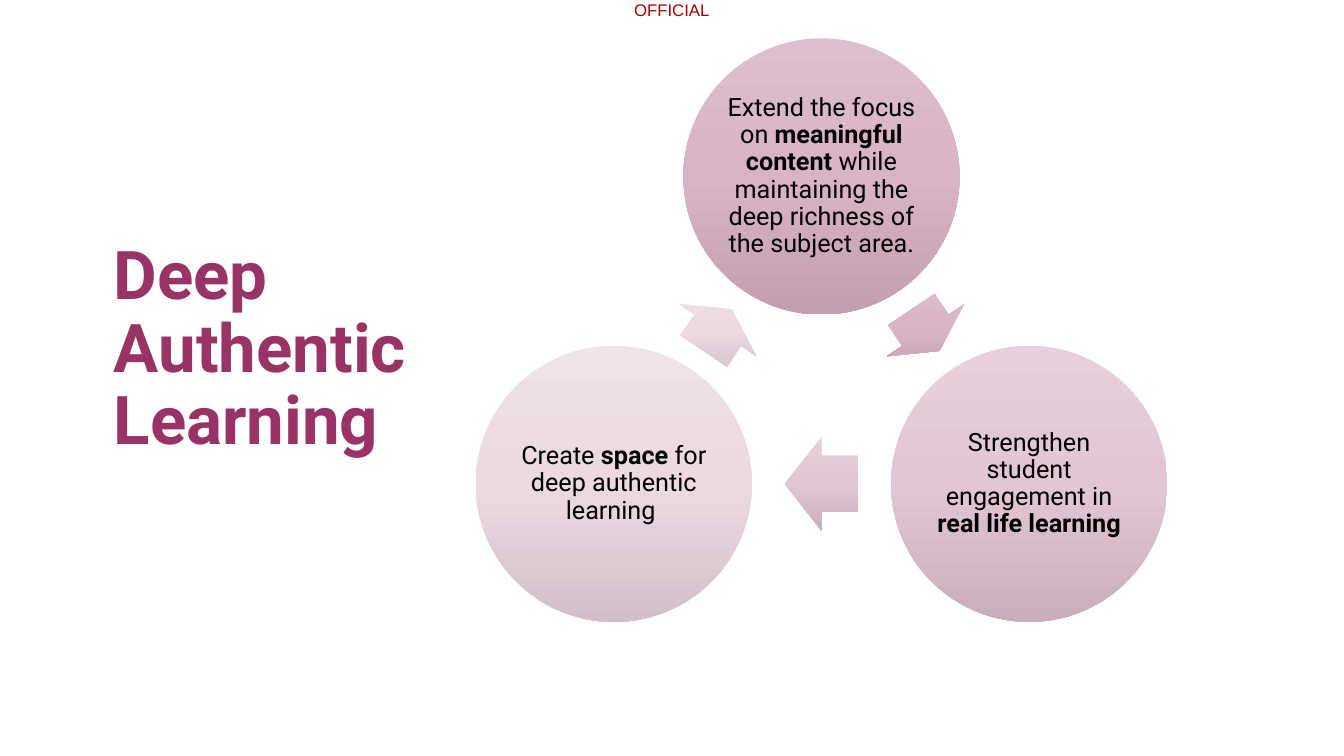
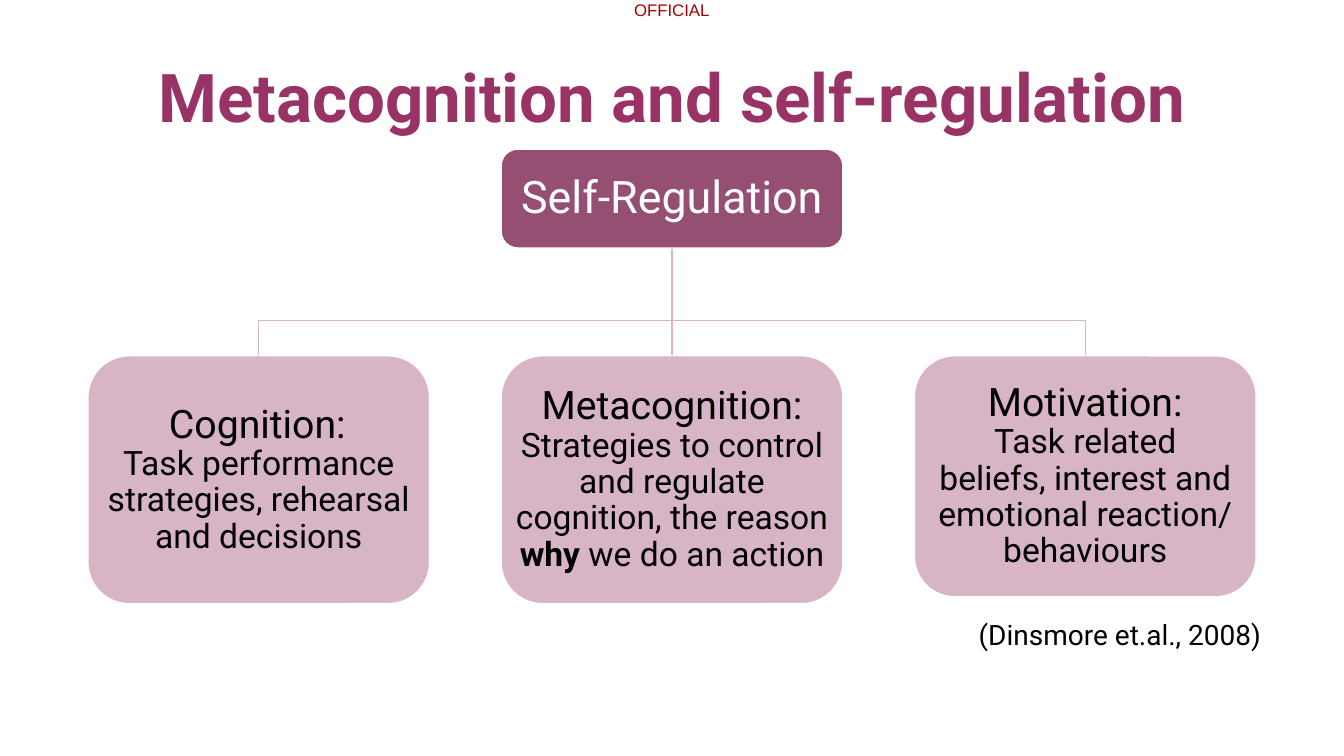
from dataclasses import dataclass
from itertools import chain
from math import atan2, degrees, hypot

from lxml.etree import SubElement
from pptx import Presentation
from pptx.dml.color import RGBColor
from pptx.enum.shapes import MSO_SHAPE as Shape
from pptx.enum.text import MSO_ANCHOR as Anchor, PP_ALIGN as Align
from pptx.oxml.ns import qn
from pptx.shapes.autoshape import Shape as Box
from pptx.slide import Slide
from pptx.util import Inches, Pt


@dataclass(frozen=True)
class Theme:
    font: str = "Roboto"
    marking_font: str = "Arial"
    marking: str = "A80000"
    title: str = "993366"
    ink: str = "000000"
    white: str = "FFFFFF"
    plum: str = "954F72"
    pink: str = "D7B5C6"
    marking_size: int = 12
    title_size: int = 48
    circle_size: int = 18
    root_size: int = 32
    heading_size: int = 28
    body_size: int = 24
    citation_size: int = 20
    gap_size: int = 8


THEME = Theme()


@dataclass(frozen=True)
class Span:
    text: str
    bold: bool = False
    size: int | None = None
    ends_line: bool = False


@dataclass(frozen=True)
class Stage:
    x: float
    y: float
    shades: tuple[str, str, str]
    spans: tuple[Span, ...]


@dataclass(frozen=True)
class Branch:
    spans: tuple[Span, ...]
    height: float = 2.46


CYCLE_X = 8.15
CYCLE_SPREAD = 2.06
CIRCLE = 2.74
ARROW_WIDTH = 0.93
ARROW_SHARE = 0.53
STAGES = (
    Stage(CYCLE_X, 1.75, ("DDBFCE", "D9B3C6", "C39DB0"), (
        Span("Extend the focus on "), Span("meaningful content ", True),
        Span("while maintaining the deep richness of the subject area."))),
    Stage(CYCLE_X + CYCLE_SPREAD, 4.8, ("E6D0DB", "E2C6D4", "CBAEBC"), (
        Span("Strengthen student engagement in "), Span("real life learning", True))),
    Stage(CYCLE_X - CYCLE_SPREAD, 4.8, ("EFE2E8", "ECD9E2", "D3BFC9"), (
        Span("Create "), Span("space ", True), Span("for deep authentic learning "))),
)

PAGE_WIDTH, PAGE_HEIGHT = 40 / 3, 7.5
TREE_X = PAGE_WIDTH / 2
TREE_STEP = 4.1
NODE_WIDTH = 3.39
ROOT_TOP, ROOT_HEIGHT = 1.48, 0.98
BUS_Y = 3.18
BRANCH_TOP = 3.53
NO_BREAK_SPACE = chr(160)
BRANCHES = (
    Branch((
        Span("Cognition:", size=THEME.heading_size),
        Span(" ", size=THEME.gap_size, ends_line=True),
        Span("Task performance strategies, rehearsal and decisions"))),
    Branch((
        Span("Metacognition:", size=THEME.heading_size, ends_line=True),
        Span("Strategies to control and regulate cognition, the reason "),
        Span("why", True), Span(" we do an action"))),
    Branch((
        Span("Motivation:", size=THEME.heading_size, ends_line=True),
        Span(f"Task related beliefs,{NO_BREAK_SPACE}interest and "
             "emotional reaction/ behaviours")), 2.39),
)


def rgb(color: str) -> RGBColor:
    return RGBColor.from_string(color)


def set_insets(box: Box, inset: float) -> None:
    frame = box.text_frame
    frame.margin_left = frame.margin_right = Inches(inset)
    frame.margin_top = frame.margin_bottom = Inches(inset)


def write(box: Box, spans: tuple[Span, ...], size: int, color: str = THEME.ink,
          align: Align = Align.CENTER, font: str = THEME.font) -> None:
    """Fill the box with one paragraph made of the spans."""
    frame = box.text_frame
    frame.vertical_anchor = Anchor.MIDDLE
    para = frame.paragraphs[0]
    para.alignment = align
    para.line_spacing = 0.9
    para.font.name = font
    para.font.size = Pt(size)
    para.font.color.rgb = rgb(color)
    for span in spans:
        run = para.add_run()
        run.text = span.text
        run.font.bold = span.bold
        if span.size:
            run.font.size = Pt(span.size)
        if span.ends_line:
            para.add_line_break()


def add_text(page: Slide, left: float, top: float, width: float, height: float,
             wrap: bool = True) -> Box:
    box = page.shapes.add_textbox(
        Inches(left), Inches(top), Inches(width), Inches(height))
    box.text_frame.word_wrap = wrap
    return box


def add_title(page: Slide, text: str, left: float, top: float, width: float,
              height: float, align: Align) -> None:
    box = add_text(page, left, top, width, height)
    write(box, (Span(text, True),), THEME.title_size, THEME.title, align)


def add_page(deck: Presentation) -> Slide:
    """Add a blank slide with the security marking on top."""
    page = deck.slides.add_slide(deck.slide_layouts[6])
    box = add_text(page, 6.29, 0, 0.8, 0.2, wrap=False)
    set_insets(box, 0)
    write(box, (Span("OFFICIAL"),), THEME.marking_size, THEME.marking,
          Align.LEFT, THEME.marking_font)
    box.text_frame.paragraphs[0].line_spacing = 1.0
    return page


def add_centred_shape(page: Slide, kind: Shape, x: float, y: float,
                      width: float, height: float) -> Box:
    shape = page.shapes.add_shape(
        kind, Inches(x - width / 2), Inches(y - height / 2),
        Inches(width), Inches(height))
    shape.shadow.inherit = False
    return shape


def shade(shape: Box, shades: tuple[str, str, str]) -> None:
    """Apply a top-to-bottom gradient that stays upright when the shape turns."""
    shape.line.fill.background()
    shape.fill.gradient()
    gradient = shape._element.spPr.find(qn("a:gradFill"))
    gradient.set("rotWithShape", "0")
    gradient.find(qn("a:lin")).set("ang", "5400000")
    stops = gradient.find(qn("a:gsLst"))
    for old_stop in list(stops):
        stops.remove(old_stop)
    for index, color in enumerate(shades):
        stop = SubElement(stops, qn("a:gs"), pos=str(index * 50000))
        SubElement(stop, qn("a:srgbClr"), val=color)


def add_stage(page: Slide, stage: Stage) -> None:
    circle = add_centred_shape(page, Shape.OVAL, stage.x, stage.y, CIRCLE, CIRCLE)
    shade(circle, stage.shades)
    set_insets(circle, 0.03)
    write(circle, stage.spans, THEME.circle_size)


def add_arrow(page: Slide, start: Stage, end: Stage) -> None:
    """Point from one stage to the next, midway between the circles."""
    dx, dy = end.x - start.x, end.y - start.y
    length = ARROW_SHARE * (hypot(dx, dy) - CIRCLE)
    arrow = add_centred_shape(
        page, Shape.RIGHT_ARROW, (start.x + end.x) / 2, (start.y + end.y) / 2,
        length, ARROW_WIDTH)
    arrow.adjustments[0] = 0.6
    arrow.adjustments[1] = 0.5
    arrow.rotation = degrees(atan2(dy, dx))
    shade(arrow, start.shades)


def add_branch_line(page: Slide, x: float) -> None:
    """Draw an open outline from the root down to the branch centred on x."""
    points = [(x, BRANCH_TOP)]
    if x != TREE_X:
        points = [(TREE_X, BUS_Y), (x, BUS_Y)] + points
    builder = page.shapes.build_freeform(
        Inches(TREE_X), Inches(ROOT_TOP + ROOT_HEIGHT))
    builder.add_line_segments(
        [(Inches(px), Inches(py)) for px, py in points], close=False)
    outline = builder.convert_to_shape()
    outline.shadow.inherit = False
    outline.fill.background()
    outline.line.color.rgb = rgb(THEME.pink)
    outline.line.width = Pt(1)


def add_node(page: Slide, x: float, top: float, height: float, fill: str) -> Box:
    node = add_centred_shape(
        page, Shape.ROUNDED_RECTANGLE, x, top + height / 2, NODE_WIDTH, height)
    node.fill.solid()
    node.fill.fore_color.rgb = rgb(fill)
    node.line.color.rgb = rgb(THEME.white)
    node.line.width = Pt(1)
    set_insets(node, 0.02)
    return node


def build_cycle(deck: Presentation) -> None:
    page = add_page(deck)
    for start, end in zip(STAGES, chain(STAGES[1:], STAGES[:1])):
        add_stage(page, start)
        add_arrow(page, start, end)
    add_title(page, "Deep Authentic Learning", 1.03, 0.78, 4.16, 5.39, Align.LEFT)


def build_tree(deck: Presentation) -> None:
    page = add_page(deck)
    columns = [TREE_X + TREE_STEP * i for i in (-1, 0, 1)]
    for x in reversed(columns):
        add_branch_line(page, x)

    root = add_node(page, TREE_X, ROOT_TOP, ROOT_HEIGHT, THEME.plum)
    write(root, (Span("Self-Regulation"),), THEME.root_size, THEME.white)
    for x, branch in zip(columns, BRANCHES):
        node = add_node(page, x, BRANCH_TOP, branch.height, THEME.pink)
        write(node, branch.spans, THEME.body_size)

    citation = add_text(page, 9.61, 6.07, 3.06, 0.44)
    write(citation, (Span("(Dinsmore et.al., 2008)"),), THEME.citation_size,
          align=Align.LEFT)
    citation.text_frame.paragraphs[0].line_spacing = 1.0
    add_title(page, "Metacognition and self-regulation",
              0.92, 0.27, 11.5, 1.45, Align.CENTER)


def main() -> None:
    deck = Presentation()
    deck.slide_width = Inches(PAGE_WIDTH)
    deck.slide_height = Inches(PAGE_HEIGHT)
    build_cycle(deck)
    build_tree(deck)
    deck.save("out.pptx")


if __name__ == "__main__":
    main()
